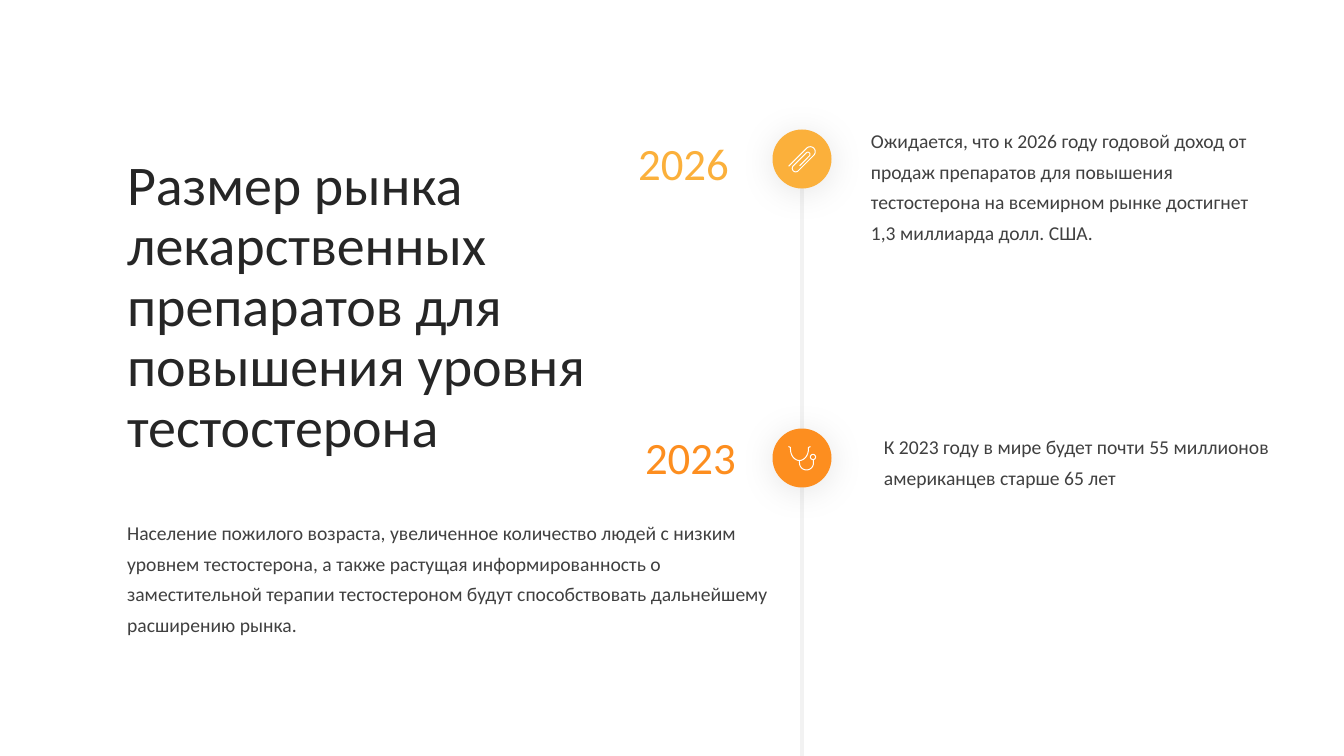
import math

from lxml import etree
from pptx import Presentation
from pptx import util as u
from pptx.dml import color
from pptx.enum import shapes, text
from pptx.oxml import ns

PX = 914400 / 100.8
FONT = "Calibri"
DARK, BODY, RULE, WHITE = "262626", "404040", "F2F2F2", "FFFFFF"
AMBER, ORANGE = "FBB03B", "FD8E1F"
DIAMETER = 59


def px(length):
    return u.Emu(round(length * PX))


def rgb(value):
    return color.RGBColor.from_string(value)


def write(holder, box, words, size, hue, **layout):
    """Place a text holder in its box and set one formatted paragraph."""
    for side, length in zip(("left", "top", "width", "height"), box):
        setattr(holder, side, px(length))
    frame = holder.text_frame
    frame.text = words
    paragraph = frame.paragraphs[0]
    frame_format = {"word_wrap": True, "auto_size": text.MSO_AUTO_SIZE.NONE,
                    "vertical_anchor": text.MSO_ANCHOR.TOP}
    paragraph_format = {"alignment": text.PP_ALIGN.LEFT, "space_before": u.Pt(0), **layout}
    font_format = {"name": FONT, "size": u.Pt(size)}
    font = paragraph.runs[0].font
    for target, values in ((frame, frame_format), (paragraph, paragraph_format),
                           (font, font_format)):
        for name, value in values.items():
            setattr(target, name, value)
    font.color.rgb = rgb(hue)
    return paragraph


def arc(cx, cy, rx, ry, start, end, steps=16):
    angles = [math.radians(start + (end - start) * i / steps) for i in range(steps + 1)]
    return [(cx + rx * math.cos(a), cy + ry * math.sin(a)) for a in angles]


def paperclip():
    """One wire of three loops, turned to point up and right."""
    wire = [(-14.5, -4.3), *arc(11, 0.7, 5, 5, -90, 90),
            *arc(-11, 2.2, 3.5, 3.5, 90, 270),
            *arc(7.4, 0.9, 2.2, 2.2, -90, 90), (-6.5, 3.1)]
    turn = math.sqrt(0.5)
    return [[((x + y) * turn, (y - x) * turn) for x, y in wire]]


def stethoscope():
    earpieces = [(-13.5, -11.5), (-11.5, -10.5), *arc(-2.5, -9, 9, 11.5, 180, 0),
                 (6.5, -10.5), (8.5, -11.5)]
    tube = [(-2.5, 2.5), *arc(4.5, 5, 7, 7, 180, 0), (11.5, 2)]
    chestpiece = arc(11, -1, 2.6, 2.6, 0, 360)
    return [earpieces, tube, chestpiece]


def add_badge(slide, cx, cy, hue, strokes):
    """Shadowed disc with a line icon, centred on cx, cy."""
    group = slide.shapes.add_group_shape()
    disc = group.shapes.add_shape(
        shapes.MSO_SHAPE.OVAL, px(cx - DIAMETER / 2), px(cy - DIAMETER / 2),
        px(DIAMETER), px(DIAMETER))
    disc.fill.solid()
    disc.fill.fore_color.rgb = rgb(hue)
    disc.line.fill.background()
    disc.shadow.inherit = False
    effects = disc._element.spPr.find(ns.qn("a:effectLst"))
    shadow = etree.SubElement(
        effects, ns.qn("a:outerShdw"), blurRad=str(u.Pt(25)), dist=str(u.Pt(3)),
        dir="5400000", algn="t", rotWithShape="0")
    black = etree.SubElement(shadow, ns.qn("a:srgbClr"), val="000000")
    etree.SubElement(black, ns.qn("a:alpha"), val="10000")

    for stroke in strokes:
        points = [(px(cx + x), px(cy + y)) for x, y in stroke]
        builder = group.shapes.build_freeform(*points[0])
        builder.add_line_segments(points[1:], close=False)
        wire = builder.convert_to_shape()
        wire.fill.background()
        wire.line.color.rgb = rgb(WHITE)
        wire.line.width = px(1)
        wire.shadow.inherit = False


def add_overview(slide, left, top):
    write(slide.shapes.title, (left, top, 497, 316),
          "Размер рынка лекарственных препаратов для повышения уровня тестостерона",
          40, DARK, line_spacing=0.9)
    summary = write(
        slide.placeholders[1], (left, top + 357, 671, 131),
        "Население пожилого возраста, увеличенное количество людей с низким уровнем "
        "тестостерона, а также растущая информированность о заместительной терапии "
        "тестостероном будут способствовать дальнейшему расширению рынка.",
        14, BODY, line_spacing=1.3)
    properties = summary._p.get_or_add_pPr()
    properties.set("marL", "0")
    properties.set("indent", "0")
    etree.SubElement(properties, ns.qn("a:buNone"))


def add_milestone(slide, axis, cy, year, year_box, note, note_box, hue, strokes):
    """Year left of the axis, badge on it, note to its right."""
    heading = write(slide.shapes.add_textbox(0, 0, 0, 0), year_box, year, 32, hue,
                    alignment=text.PP_ALIGN.RIGHT)
    write(slide.shapes.add_textbox(0, 0, 0, 0), note_box, note, 14, BODY, line_spacing=1.3)
    add_badge(slide, axis, cy, hue, strokes)
    return heading


def add_timeline(slide, axis, top, bottom):
    rule = slide.shapes.add_connector(
        shapes.MSO_CONNECTOR.STRAIGHT, px(axis), px(top), px(axis), px(bottom))
    rule.line.color.rgb = rgb(RULE)
    rule.line.width = u.Pt(2.5)
    etree.SubElement(rule._element.spPr, ns.qn("a:effectLst"))

    later = add_milestone(
        slide, axis, top, "2026", (axis - 238, top - 28, 175, 65),
        "Ожидается, что к 2026 году годовой доход от продаж препаратов для повышения "
        "тестостерона на всемирном рынке достигнет 1,3 миллиарда долл. США.",
        (axis + 59, top - 42, 408, 131), AMBER, paperclip())
    blend = later.runs[0].font.fill
    blend.gradient()
    blend.gradient_angle = 225
    for stop, hue in zip(blend.gradient_stops, (AMBER, ORANGE)):
        stop.color.rgb = rgb(hue)

    cy = top + 299
    add_milestone(
        slide, axis, cy, "2023", (axis - 231, cy - 33, 175, 65),
        "К 2023 году в мире будет почти 55 миллионов американцев старше 65 лет",
        (axis + 72, cy - 35, 408, 70), ORANGE, stethoscope())


def main():
    deck = Presentation()
    deck.slide_width, deck.slide_height = px(1344), px(756)
    slide = deck.slides.add_slide(deck.slide_layouts[1])
    slide.background.fill.solid()
    slide.background.fill.fore_color.rgb = rgb(WHITE)
    add_overview(slide, 117, 152)
    add_timeline(slide, 802, 159, 756)
    deck.save("out.pptx")


if __name__ == "__main__":
    main()
